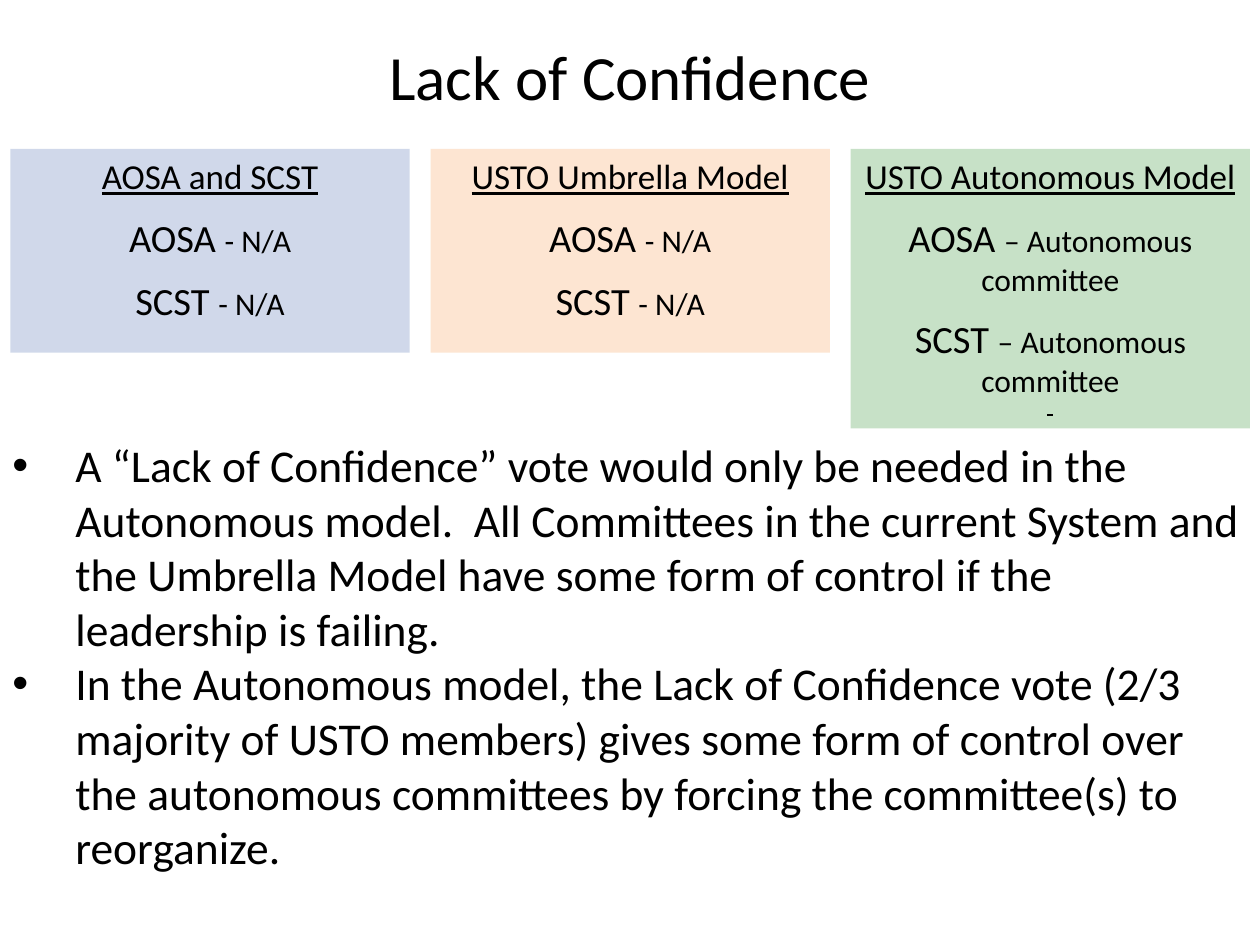
from lxml import etree
from pptx import Presentation
from pptx.dml.color import RGBColor
from pptx.enum.shapes import MSO_SHAPE as Shape
from pptx.enum.text import MSO_ANCHOR as Anchor, PP_ALIGN as Align
from pptx.oxml.ns import qn
from pptx.util import Cm, Pt

BLACK = RGBColor(0x00, 0x00, 0x00)
BLUE = RGBColor(0x29, 0x51, 0xA0)
PEACH = RGBColor(0xFC, 0xD5, 0xB5)
GREEN = RGBColor(0x22, 0x8B, 0x22)
FONT = "Calibri"


def style(font, size):
    font.name, font.size, font.color.rgb = FONT, Pt(size), BLACK


prs = Presentation()
prs.slide_width, prs.slide_height = Cm(25.4), Cm(19.05)
slide = prs.slides.add_slide(prs.slide_layouts[6])

# Three models side by side: heading, fill, opacity in percent, height, answer
models = [
    ("AOSA and SCST", BLUE, 22, 4.11, "- N/A"),
    ("USTO Umbrella Model", PEACH, 60, 4.11, "- N/A"),
    ("USTO Autonomous Model", GREEN, 25, 5.64, "– Autonomous committee"),
]
for column, (heading, color, opacity, height, answer) in enumerate(models):
    model = slide.shapes.add_shape(
        Shape.RECTANGLE, Cm(0.21 + 8.47 * column), Cm(3), Cm(8.05), Cm(height))
    model.shadow.inherit = False
    model.line.fill.background()
    model.fill.solid()
    model.fill.fore_color.rgb = color
    tint = model.fill._xPr.find(qn("a:solidFill"))[0]
    etree.SubElement(tint, qn("a:alpha"), val=str(opacity * 1000))

    frame = model.text_frame
    frame.word_wrap = True
    frame.vertical_anchor = Anchor.TOP
    title_line = frame.paragraphs[0]
    title_line.text = heading
    title_line.alignment = Align.CENTER
    style(title_line.font, 20)
    title_line.font.underline = True

    for society in ("AOSA ", "SCST "):
        entry = frame.add_paragraph()
        entry.alignment = Align.CENTER
        entry.space_before = Pt(9.8)
        for words, size in ((society, 22), (answer, 18)):
            run = entry.add_run()
            run.text = words
            style(run.font, size)

# Short underline mark closing the Autonomous model
mark = frame.add_paragraph()
mark.alignment = Align.CENTER
mark_run = mark.add_run()
mark_run.text = "  "
style(mark_run.font, 8)
mark_run.font.underline = True

# Slide title
title = slide.shapes.add_textbox(0, Cm(0.64), Cm(25.4), Cm(1.8)).text_frame
title.word_wrap = True
title.text = "Lack of Confidence"
title.paragraphs[0].alignment = Align.CENTER
style(title.paragraphs[0].font, 36)

# Bulleted explanation
points = [
    "A “Lack of Confidence” vote would only be needed in the Autonomous model.  "
    "All Committees in the current System and the Umbrella Model have some form "
    "of control if the leadership is failing.",
    "In the Autonomous model, the Lack of Confidence vote (2/3 majority of USTO "
    "members) gives some form of control over the autonomous committees by "
    "forcing the committee(s) to reorganize.",
]
explanation = slide.shapes.add_textbox(0, Cm(8.69), Cm(25.4), Cm(10.26)).text_frame
explanation.word_wrap = True
for index, words in enumerate(points):
    point = explanation.add_paragraph() if index else explanation.paragraphs[0]
    point.text = words
    props = point._p.get_or_add_pPr()
    props.set("marL", str(Cm(1.27)))
    props.set("indent", str(-Cm(1.27)))
    etree.SubElement(props, qn("a:buFont"), typeface="Arial")
    etree.SubElement(props, qn("a:buChar"), char="•")
    style(point.font, 26)

prs.save("out.pptx")
